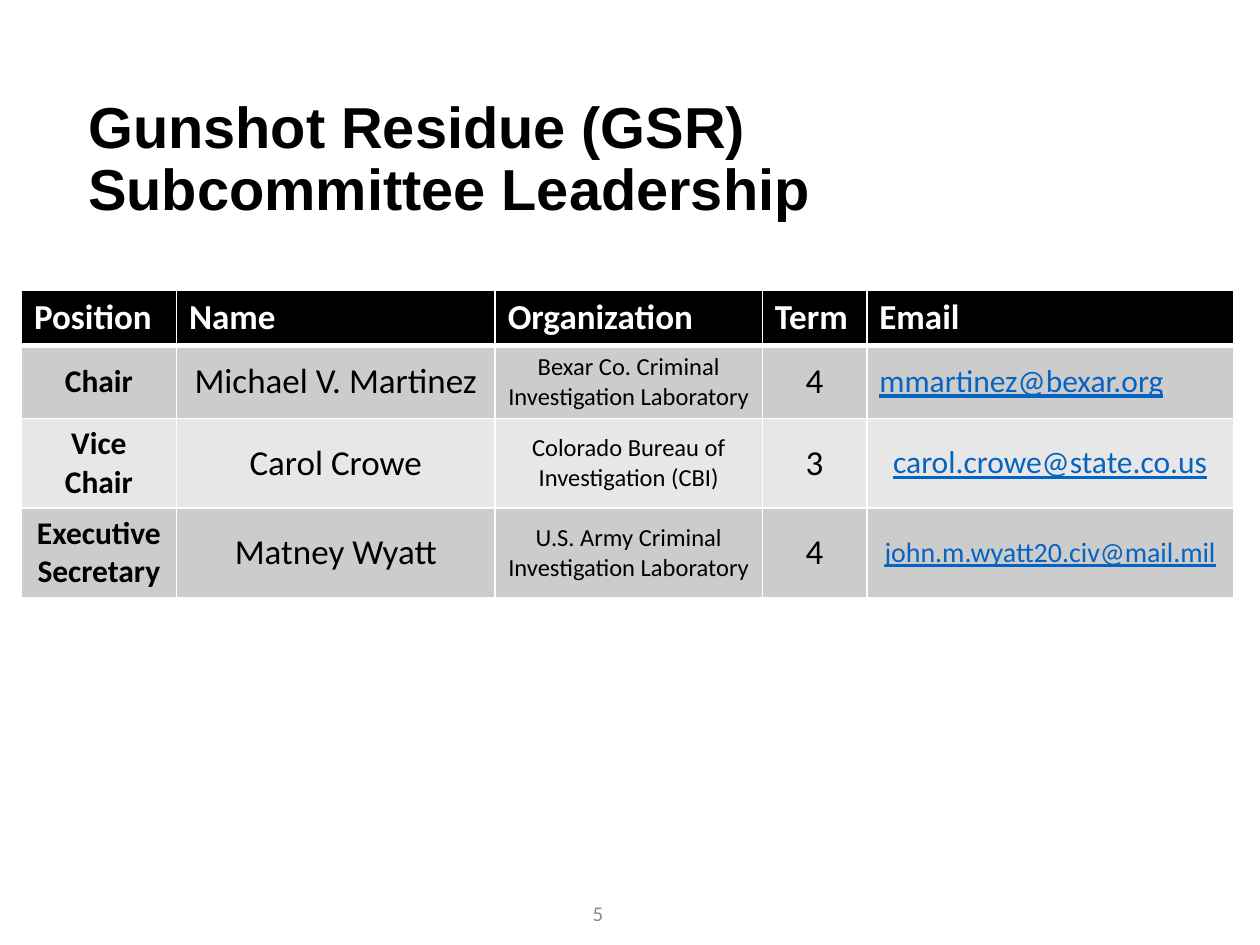
from lxml.etree import SubElement
from pptx import Presentation
from pptx.dml.color import RGBColor
from pptx.enum.text import MSO_ANCHOR, PP_ALIGN
from pptx.oxml.ns import qn
from pptx.util import Inches, Pt

TITLE = "Gunshot Residue (GSR) Subcommittee Leadership"
PAGE_NUMBER = "5"
HEADERS = ["Position", "Name", "Organization", "Term", "Email"]
LEADERS = [
    ("Chair", "Michael V. Martinez", "Bexar Co. Criminal Investigation Laboratory",
     "4", "mmartinez@bexar.org"),
    ("Vice Chair", "Carol Crowe", "Colorado Bureau of Investigation (CBI)",
     "3", "carol.crowe@state.co.us"),
    ("Executive Secretary", "Matney Wyatt", "U.S. Army Criminal Investigation Laboratory",
     "4", "john.m.wyatt20.civ@mail.mil"),
]
COLUMN_WIDTHS = [1.23, 2.53, 2.12, 0.83, 2.91]
ROW_HEIGHTS = [0.43, 0.58, 0.71, 0.71]
COLUMN_SIZES = [18, 20, 14, 20, 18]
LONG_EMAIL_SIZE = 16
EMAIL = HEADERS.index("Email")
BAND_FILLS = ["CCCCCC", "E7E7E7"]


def color(value):
    return RGBColor.from_string(value)


def add_text(frame, text, size, ink, font="Calibri", bold=False,
             underline=False, align=PP_ALIGN.LEFT):
    para = frame.paragraphs[0]
    para.alignment = align
    span = para.add_run()
    span.text = text
    span.font.name = font
    span.font.size = Pt(size)
    span.font.bold = bold
    span.font.underline = underline
    span.font.color.rgb = color(ink)
    return para


def style_cell(cell, fill, top=1, bottom=1):
    """Give the cell a solid fill and white borders, widths in points."""
    properties = cell._tc.get_or_add_tcPr()
    for side, width in (("L", 1), ("R", 1), ("T", top), ("B", bottom)):
        line = SubElement(properties, qn(f"a:ln{side}"), w=str(Pt(width)))
        solid = SubElement(line, qn("a:solidFill"))
        SubElement(solid, qn("a:srgbClr"), val="FFFFFF")
    cell.fill.solid()
    cell.fill.fore_color.rgb = color(fill)


def add_title(page):
    title = page.shapes.title
    title.left, title.top = Inches(0.6), Inches(0.55)
    title.width, title.height = Inches(8.62), Inches(1.45)
    title.text_frame.word_wrap = True
    title.text_frame.vertical_anchor = MSO_ANCHOR.MIDDLE
    para = add_text(title.text_frame, TITLE, 33, "000000", "Arial", bold=True)
    para.line_spacing = 0.9


def add_leadership_table(page):
    table = page.shapes.add_table(
        len(LEADERS) + 1, len(HEADERS), Inches(0.17), Inches(2.3),
        Inches(sum(COLUMN_WIDTHS)), Inches(sum(ROW_HEIGHTS))).table
    for column, width in zip(table.columns, COLUMN_WIDTHS):
        column.width = Inches(width)
    for row, height in zip(table.rows, ROW_HEIGHTS):
        row.height = Inches(height)

    for column, text in enumerate(HEADERS):
        cell = table.cell(0, column)
        style_cell(cell, "000000", bottom=3)
        add_text(cell.text_frame, text, 20, "FFFFFF", bold=True)

    for row, leader in enumerate(LEADERS, start=1):
        for column, text in enumerate(leader):
            cell = table.cell(row, column)
            style_cell(cell, BAND_FILLS[(row - 1) % 2], top=3 if row == 1 else 1)
            cell.vertical_anchor = MSO_ANCHOR.MIDDLE
            is_email = column == EMAIL
            first_email = is_email and row == 1
            if is_email and not first_email:
                cell.margin_left = cell.margin_right = 0
                cell.margin_top = cell.margin_bottom = 0
            size = LONG_EMAIL_SIZE if len(text) > 25 and is_email else COLUMN_SIZES[column]
            add_text(cell.text_frame, text, size,
                     "0563C1" if is_email else "000000",
                     bold=column == 0, underline=is_email,
                     align=PP_ALIGN.LEFT if first_email else PP_ALIGN.CENTER)


def add_page_number(page):
    box = page.shapes.add_textbox(Inches(3.62), Inches(7.05), Inches(2.25), Inches(0.4))
    box.text_frame.word_wrap = True
    box.text_frame.vertical_anchor = MSO_ANCHOR.MIDDLE
    add_text(box.text_frame, PAGE_NUMBER, 12, "8C8C8C", align=PP_ALIGN.CENTER)


def main():
    deck = Presentation()
    deck.slide_width, deck.slide_height = Inches(10), Inches(7.5)
    page = deck.slides.add_slide(deck.slide_layouts[5])
    add_title(page)
    add_leadership_table(page)
    add_page_number(page)
    deck.save("out.pptx")


if __name__ == "__main__":
    main()
